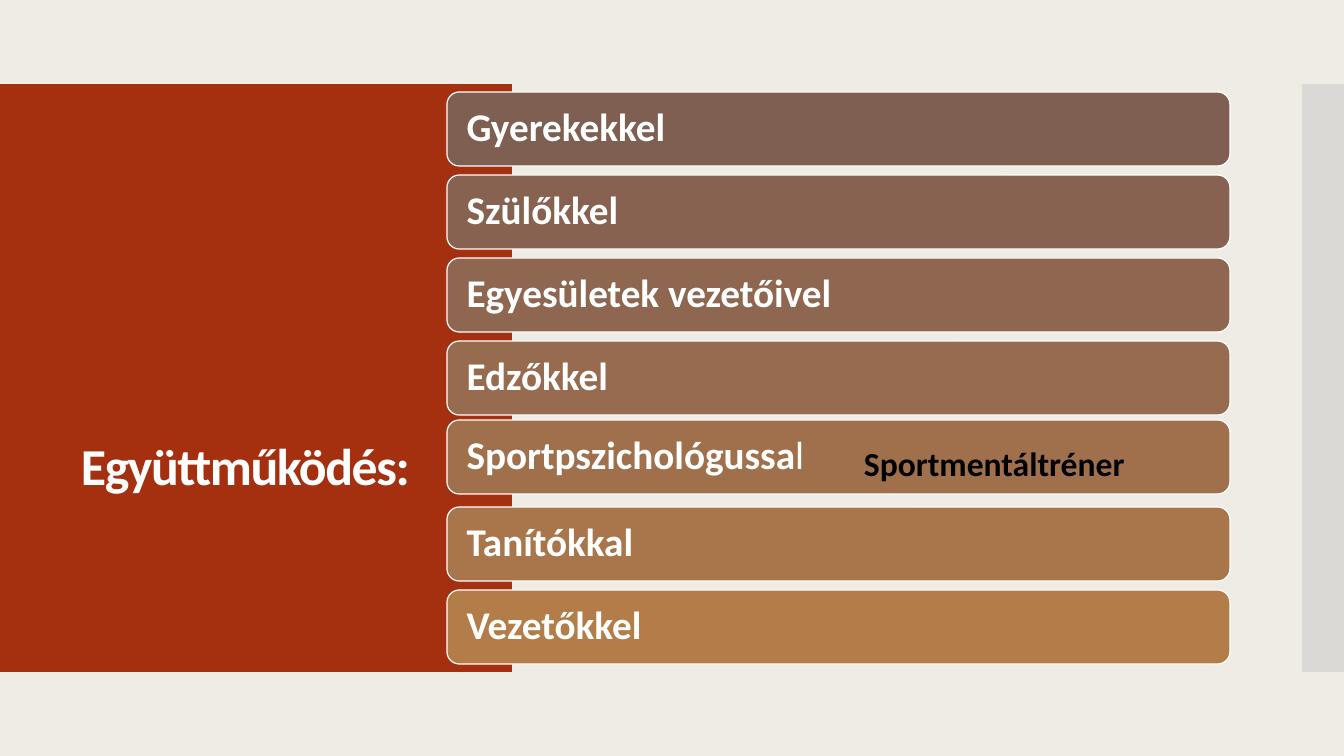
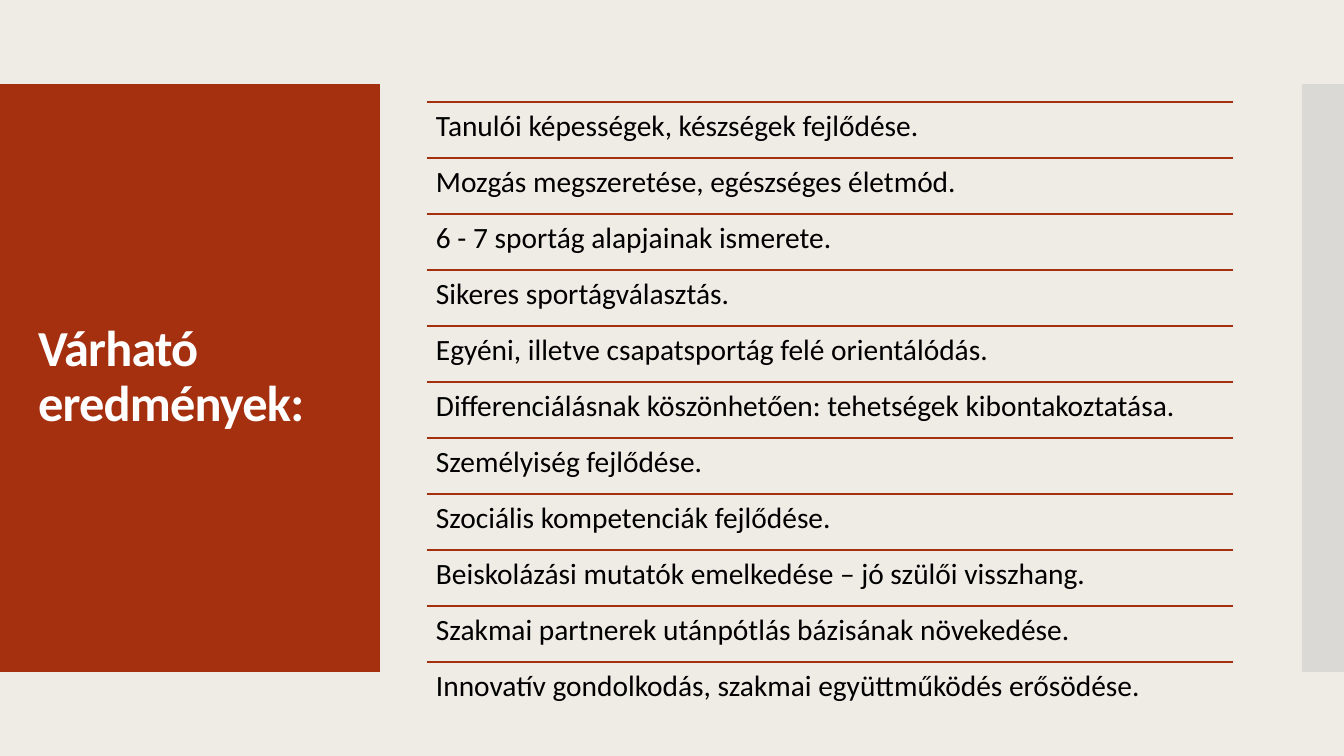
from dataclasses import dataclass

from lxml.etree import SubElement
from pptx import Presentation
from pptx.dml.color import RGBColor
from pptx.enum.shapes import MSO_CONNECTOR, MSO_SHAPE
from pptx.enum.text import MSO_ANCHOR, PP_ALIGN
from pptx.oxml.ns import qn
from pptx.shapes.autoshape import Shape
from pptx.slide import Slide
from pptx.text.text import TextFrame
from pptx.util import Emu, Pt

SLIDE_WIDTH, SLIDE_HEIGHT = 1344, 756
EMU_PER_PX = 12192000 / SLIDE_WIDTH

FONT = "Calibri"
CREAM = RGBColor(0xEF, 0xEB, 0xE5)
RUST = RGBColor(0xA5, 0x30, 0x0F)
GREY = RGBColor(0xC8, 0xC8, 0xC8)
WHITE = RGBColor(0xFF, 0xFF, 0xFF)
BLACK = RGBColor(0x00, 0x00, 0x00)

BAND_TOP, BAND_HEIGHT = 84, 588
EDGE_WIDTH = 42
LINE_WIDTH = Pt(0.85)


@dataclass(frozen=True)
class Box:
    left: int
    top: int
    width: int
    height: int

    def emu(self) -> tuple[Emu, Emu, Emu, Emu]:
        return px(self.left), px(self.top), px(self.width), px(self.height)


@dataclass(frozen=True)
class TextStyle:
    size: float
    color: RGBColor
    bold: bool = False
    line_spacing: float = 0.9
    tracking: float = 0
    anchor: MSO_ANCHOR = MSO_ANCHOR.TOP
    side_inset: int = 10
    top_inset: int = 5


@dataclass(frozen=True)
class Bar:
    text: str
    fill: RGBColor
    light_ending: str = ""
    shift: int = 0


BAR_STYLE = TextStyle(28, WHITE, bold=True, anchor=MSO_ANCHOR.MIDDLE, side_inset=16)
NOTE_STYLE = TextStyle(24, BLACK, bold=True, line_spacing=1)
RESULT_STYLE = TextStyle(21, BLACK, side_inset=9, top_inset=9)
PARTNER_TITLE = TextStyle(37, WHITE, True, tracking=-1, anchor=MSO_ANCHOR.BOTTOM)
RESULT_TITLE = TextStyle(36, WHITE, True, tracking=-0.6, anchor=MSO_ANCHOR.MIDDLE)

FIRST_BAR = Box(447, 92, 783, 74)
BAR_STEP = 83
BARS = [
    Bar("Gyerekekkel", RGBColor(0x7F, 0x5F, 0x52)),
    Bar("Szülőkkel", RGBColor(0x87, 0x62, 0x51)),
    Bar("Egyesületek vezetőivel", RGBColor(0x8F, 0x67, 0x50)),
    Bar("Edzőkkel", RGBColor(0x97, 0x6B, 0x4F)),
    Bar("Sportpszichológussa", RGBColor(0xA0, 0x70, 0x4D), light_ending="l", shift=-4),
    Bar("Tanítókkal", RGBColor(0xA9, 0x76, 0x4B)),
    Bar("Vezetőkkel", RGBColor(0xB2, 0x7D, 0x49)),
]

FIRST_RESULT = Box(427, 102, 806, 56)
RESULTS = [
    "Tanulói képességek, készségek fejlődése.",
    "Mozgás megszeretése, egészséges életmód.",
    "6 - 7 sportág alapjainak ismerete.",
    "Sikeres sportágválasztás.",
    "Egyéni, illetve csapatsportág felé orientálódás.",
    "Differenciálásnak köszönhetően: tehetségek kibontakoztatása.",
    "Személyiség fejlődése.",
    "Szociális kompetenciák fejlődése.",
    "Beiskolázási mutatók emelkedése – jó szülői visszhang.",
    "Szakmai partnerek utánpótlás bázisának növekedése.",
    "Innovatív gondolkodás, szakmai együttműködés erősödése.",
]


def px(length: int) -> Emu:
    return Emu(round(length * EMU_PER_PX))


def write_text(frame: TextFrame, text: str, style: TextStyle, light_ending: str = "") -> None:
    """Fill the frame with one paragraph; light_ending follows it without bold."""
    frame.word_wrap = True
    frame.vertical_anchor = style.anchor
    frame.margin_left = frame.margin_right = px(style.side_inset)
    frame.margin_top = frame.margin_bottom = px(style.top_inset)
    paragraph = frame.paragraphs[0]
    paragraph.alignment = PP_ALIGN.LEFT
    paragraph.line_spacing = style.line_spacing
    font = paragraph.font
    font.name, font.size, font.bold = FONT, Pt(style.size), style.bold
    font.color.rgb = style.color
    run = paragraph.add_run()
    run.text = text
    if style.tracking:
        run._r.get_or_add_rPr().set("spc", str(round(style.tracking * 100)))
    if light_ending:
        ending = paragraph.add_run()
        ending.text = light_ending
        ending.font.bold = False


def add_text(slide: Slide, box: Box, text: str, style: TextStyle) -> None:
    write_text(slide.shapes.add_textbox(*box.emu()).text_frame, text, style)


def add_filled(slide: Slide, kind: MSO_SHAPE, box: Box, fill: RGBColor) -> Shape:
    shape = slide.shapes.add_shape(kind, *box.emu())
    shape.shadow.inherit = False
    shape.fill.solid()
    shape.fill.fore_color.rgb = fill
    shape.line.fill.background()
    return shape


def add_rule(slide: Slide, left: int, top: int, width: int) -> None:
    rule = slide.shapes.add_connector(
        MSO_CONNECTOR.STRAIGHT, px(left), px(top), px(left + width), px(top)
    )
    rule.line.color.rgb = RUST
    rule.line.width = LINE_WIDTH
    SubElement(rule._element.spPr, qn("a:effectLst"))


def add_base_slide(
    presentation: Presentation, panel_width: int, title: str, title_box: Box, style: TextStyle
) -> Slide:
    """Add a slide with the background, rust title panel and grey right edge."""
    slide = presentation.slides.add_slide(presentation.slide_layouts[6])
    slide.background.fill.solid()
    slide.background.fill.fore_color.rgb = CREAM
    panel = Box(0, BAND_TOP, panel_width, BAND_HEIGHT)
    add_filled(slide, MSO_SHAPE.RECTANGLE, panel, RUST)
    edge_box = Box(SLIDE_WIDTH - EDGE_WIDTH, BAND_TOP, EDGE_WIDTH, BAND_HEIGHT)
    edge = add_filled(slide, MSO_SHAPE.RECTANGLE, edge_box, GREY)
    edge_color = edge._element.spPr.find(qn("a:solidFill")).find(qn("a:srgbClr"))
    SubElement(edge_color, qn("a:alpha")).set("val", "50000")
    add_text(slide, title_box, title, style)
    return slide


def add_partners_slide(presentation: Presentation) -> None:
    slide = add_base_slide(
        presentation, 512, "Együttműködés:", Box(71, 143, 406, 359), PARTNER_TITLE
    )
    for index, bar in enumerate(BARS):
        top = FIRST_BAR.top + index * BAR_STEP + bar.shift
        box = Box(FIRST_BAR.left, top, FIRST_BAR.width, FIRST_BAR.height)
        shape = add_filled(slide, MSO_SHAPE.ROUNDED_RECTANGLE, box, bar.fill)
        shape.line.color.rgb = WHITE
        shape.line.width = LINE_WIDTH
        write_text(shape.text_frame, bar.text, BAR_STYLE, bar.light_ending)
    add_text(slide, Box(854, 438, 303, 50), "Sportmentáltréner", NOTE_STYLE)


def add_results_slide(presentation: Presentation) -> None:
    slide = add_base_slide(
        presentation, 380, "Várható eredmények:", Box(28, 124, 325, 507), RESULT_TITLE
    )
    row = FIRST_RESULT
    for index, result in enumerate(RESULTS):
        top = row.top + index * row.height
        add_rule(slide, row.left, top, row.width)
        add_text(slide, Box(row.left, top, row.width, row.height), result, RESULT_STYLE)


def main() -> None:
    presentation = Presentation()
    presentation.slide_width = px(SLIDE_WIDTH)
    presentation.slide_height = px(SLIDE_HEIGHT)
    add_partners_slide(presentation)
    add_results_slide(presentation)
    presentation.save("out.pptx")


if __name__ == "__main__":
    main()
